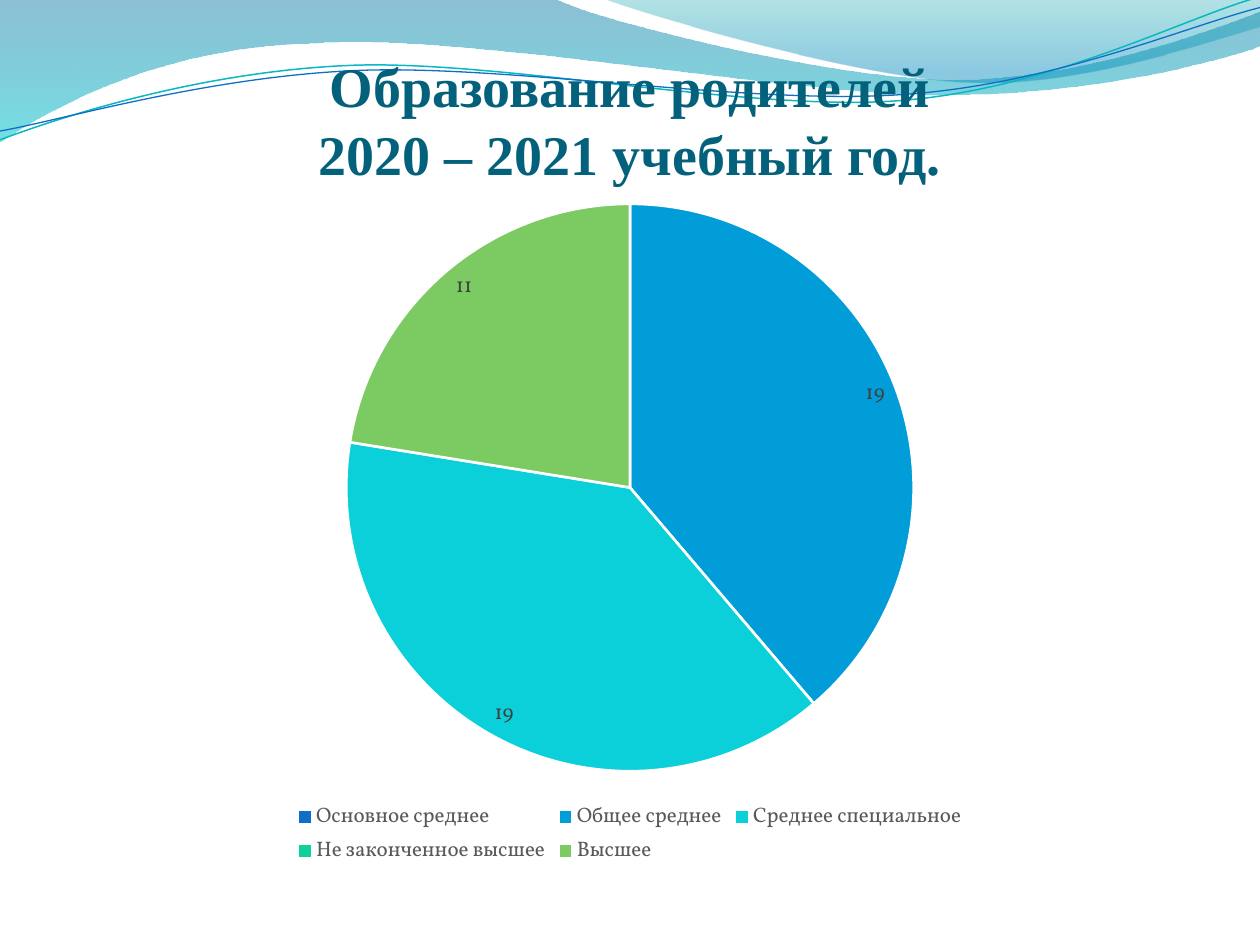
from lxml import etree
from pptx import Presentation
from pptx.chart.data import CategoryChartData
from pptx.dml.color import RGBColor
from pptx.enum.chart import XL_CHART_TYPE as ChartType
from pptx.enum.chart import XL_LABEL_POSITION as LabelPosition
from pptx.enum.chart import XL_LEGEND_POSITION as LegendPosition
from pptx.enum.text import MSO_ANCHOR, MSO_AUTO_SIZE, PP_ALIGN
from pptx.oxml import parse_xml
from pptx.util import Inches, Pt

COLORS = {
    "title": "04617B", "legend": "595959", "label": "404040", "white": "FFFFFF",
    "thick_wave": "0AB8BF", "thin_wave": "0F6FC6",
}
NAMESPACE = "http://schemas.openxmlformats.org/drawingml/2006/main"


def format_text(font, size, color, name="Vollkorn", bold=False):
    font.size, font.name, font.bold = Pt(size), name, bold
    font.color.rgb = RGBColor.from_string(COLORS[color])


def add_wave(shapes, start, segments, closed):
    """Draw an outline whose segments are line ends (x, y) or Bezier triples (six numbers)."""
    nodes = [(Inches(x), Inches(y)) for segment in segments
             for x, y in zip(segment[::2], segment[1::2])]
    builder = shapes.build_freeform(Inches(start[0]), Inches(start[1]))
    builder.add_line_segments(nodes, close=closed)
    wave = builder.convert_to_shape()
    wave.shadow.inherit = False
    # Gather each triple of straight steps into one cubic curve
    steps = iter(list(wave.element.iter(f"{{{NAMESPACE}}}lnTo")))
    for segment in segments:
        group = [next(steps) for _ in range(len(segment) // 2)]
        if len(group) == 3:
            curve = etree.Element(f"{{{NAMESPACE}}}cubicBezTo")
            group[0].addprevious(curve)
            for step in group:
                curve.append(step[0])
                step.getparent().remove(step)
    return wave


presentation = Presentation()
presentation.slide_width, presentation.slide_height = Inches(10), Inches(7.5)
slide = presentation.slides.add_slide(presentation.slide_layouts[5])
shapes = slide.shapes

# Translucent bands: start, segments, gradient stops (position %, colour, opacity %)
bands = [
    ((0, 0),
     [(4.4, -0.01), (4.76, 0.17, 6.64, 0.63, 7.58, 0.63), (8.53, 0.63, 9.58, 0.26, 10, 0.09),
      (10.01, 0.36), (9.83, 0.44, 8.7, 0.76, 7.46, 0.75), (6.22, 0.75, 3.82, 0.28, 2.57, 0.34),
      (1.29, 0.36, 0.46, 0.83, -0.01, 1.13)],
     [(0, "0074A1", 45), (100, "00C6CF", 55)]),
    ((4.79, -0.01),
     [(5.09, 0.11, 6.82, 0.62, 7.69, 0.65), (8.56, 0.69, 9.61, 0.32, 10, 0.21), (10, 0)],
     [(0, "00A1A9", 30), (80, "008BBF", 45)]),
]
for start, segments, stops in bands:
    band = add_wave(shapes, start, segments, closed=True)
    band.line.fill.background()
    band.fill.background()
    gradient = parse_xml(f'<a:gradFill xmlns:a="{NAMESPACE}"><a:gsLst/>'
                         '<a:lin ang="5400000" scaled="0"/></a:gradFill>')
    for position, color, opacity in stops:
        stop = etree.SubElement(gradient[0], f"{{{NAMESPACE}}}gs", pos=str(position * 1000))
        shade = etree.SubElement(stop, f"{{{NAMESPACE}}}srgbClr", val=color)
        etree.SubElement(shade, f"{{{NAMESPACE}}}alpha", val=str(opacity * 1000))
    no_fill = band.element.spPr.find(f"{{{NAMESPACE}}}noFill")
    no_fill.getparent().replace(no_fill, gradient)

# Thin wavy lines
waves = [
    ("thick_wave", 0.85, (0, 1.11),
     [(0.48, 0.93, 1.58, 0.57, 2.77, 0.52), (3.95, 0.47, 5.93, 0.89, 7.13, 0.8),
      (8.33, 0.71, 9.38, 0.15, 9.98, -0.02)]),
    ("thin_wave", 0.75, (0, 1.04),
     [(0.47, 0.96, 1.64, 0.61, 2.83, 0.56), (4.03, 0.51, 5.97, 0.84, 7.17, 0.75),
      (8.36, 0.67, 9.41, 0.21, 10, 0.06)]),
]
for color, width, start, segments in waves:
    wave = add_wave(shapes, start, segments, closed=False)
    wave.fill.background()
    wave.line.color.rgb = RGBColor.from_string(COLORS[color])
    wave.line.width = Pt(width)

# Title, brought in front of the waves
title = shapes.title
title.element.getparent().append(title.element)
title.left, title.top, title.width, title.height = map(Inches, (0.5, 0.77, 9, 0.71))
frame = title.text_frame
frame.auto_size = MSO_AUTO_SIZE.NONE
frame.word_wrap = True
frame.vertical_anchor = MSO_ANCHOR.BOTTOM
frame.margin_left = frame.margin_right = frame.margin_bottom = 0
frame.margin_top = Inches(0.05)
paragraph = frame.paragraphs[0]
paragraph.alignment = PP_ALIGN.CENTER
for index, line in enumerate(["Образование родителей", "2020 – 2021 учебный год."]):
    if index:
        paragraph.add_line_break()
    run = paragraph.add_run()
    run.text = line
    format_text(run.font, 32, "title", name="Times New Roman", bold=True)

# Pie chart: category, value, colour
levels = [
    ("Основное среднее", 0, "0F6FC6"),
    ("Общее среднее", 19, "009DD9"),
    ("Среднее специальное", 19, "0BD0D9"),
    ("Не законченное высшее", 0, "10CF9B"),
    ("Высшее", 11, "7CCA62"),
]
data = CategoryChartData()
data.categories = [name for name, _, _ in levels]
data.add_series("Series 1", [value for _, value, _ in levels])
chart = shapes.add_chart(ChartType.PIE, Inches(0.5), Inches(1.48), Inches(9), Inches(5.43),
                         data).chart
chart.has_title = False
chart.font.size, chart.font.name = Pt(10), "Vollkorn"
chart.has_legend = True
chart.legend.position = LegendPosition.BOTTOM
chart.legend.include_in_layout = False
format_text(chart.legend.font, 12, "legend")

plot = chart.plots[0]
plot.vary_by_categories = True
for index, (_, _, color) in enumerate(levels):
    point_format = plot.series[0].points[index].format
    point_format.fill.solid()
    point_format.fill.fore_color.rgb = RGBColor.from_string(color)
    point_format.line.color.rgb = RGBColor.from_string(COLORS["white"])
    point_format.line.width = Pt(1.5)
labels = plot.series[0].data_labels
labels.show_value = True
labels.number_format, labels.number_format_is_linked = "0;;;", False
labels.position = LabelPosition.BEST_FIT
format_text(labels.font, 12, "label")

presentation.save("out.pptx")
